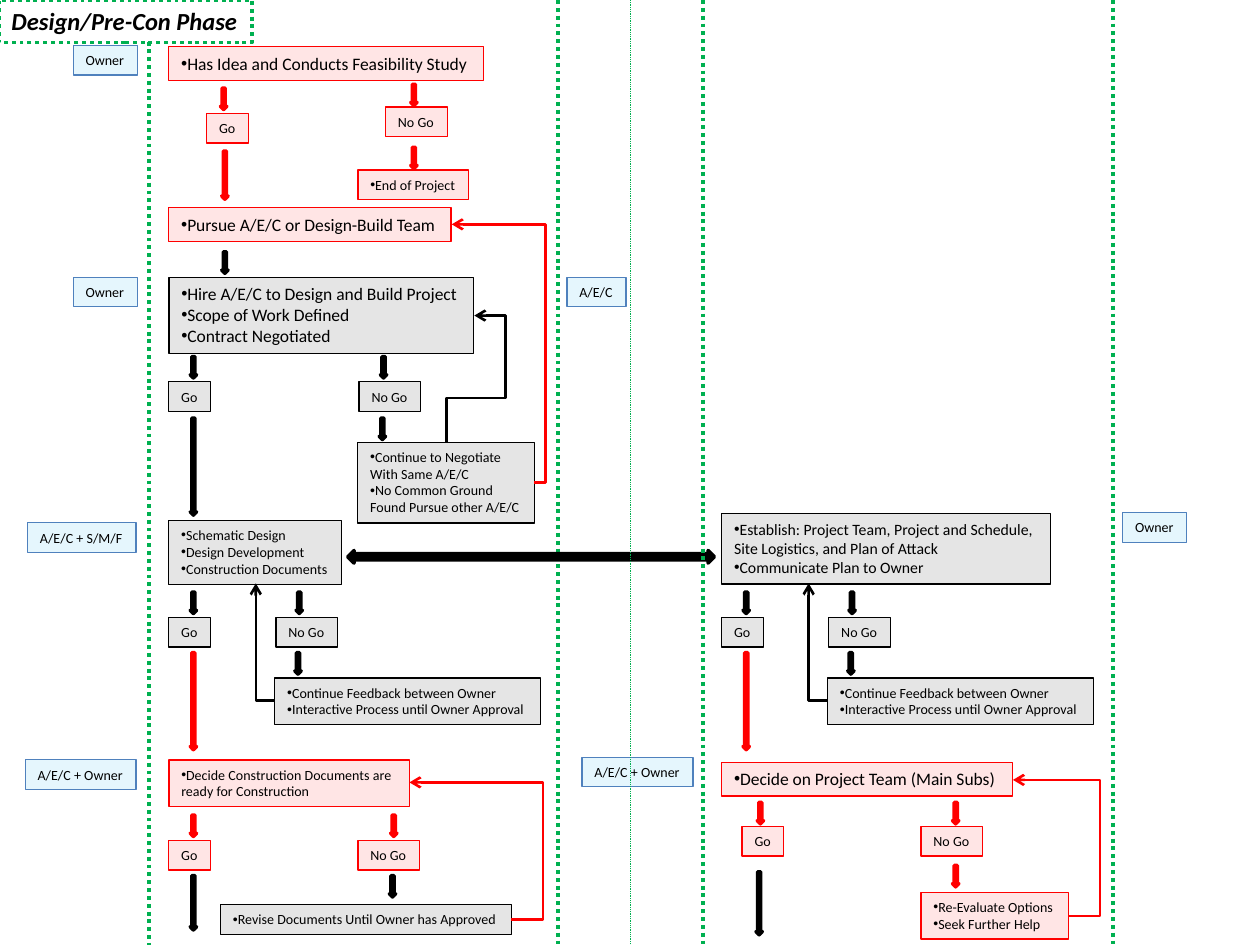
from lxml import etree
from pptx import Presentation
from pptx.dml.color import RGBColor
from pptx.enum.dml import MSO_LINE
from pptx.enum.shapes import MSO_CONNECTOR, MSO_SHAPE
from pptx.enum.text import MSO_ANCHOR, MSO_AUTO_SIZE, PP_ALIGN
from pptx.oxml.ns import qn
from pptx.util import Pt

STRAIGHT, ELBOW = MSO_CONNECTOR.STRAIGHT, MSO_CONNECTOR.ELBOW
RECTANGLE, DOWN, BOTH_WAYS = MSO_SHAPE.RECTANGLE, MSO_SHAPE.DOWN_ARROW, MSO_SHAPE.LEFT_RIGHT_ARROW
DOTTED = MSO_LINE.ROUND_DOT
LEFT = PP_ALIGN.LEFT
FIXED, GROWING = MSO_AUTO_SIZE.NONE, MSO_AUTO_SIZE.SHAPE_TO_FIT_TEXT

RED, BLACK, GREEN = "FF0000", "000000", "00B050"
CYAN, BLUE, BRICK = "00B0F0", "4F81BD", "C0504D"
TINT = 10
LINE_HEIGHT, PADDING = 1.22, 7.2
SHORT, LONG = 12.2, 55.4
FRAME_FORMAT = {"word_wrap": False, "vertical_anchor": MSO_ANCHOR.TOP}


def paint(fill, color, opacity=100):
    fill.solid()
    fill.fore_color.rgb = RGBColor.from_string(color)
    if opacity < 100:
        hue = fill._xPr.find(qn("a:solidFill"))[0]
        etree.SubElement(hue, qn("a:alpha"), val=str(opacity * 1000))


def connect(kind, x1, y1, x2, y2, color, width):
    connector = slide.shapes.add_connector(kind, Pt(x1), Pt(y1), Pt(x2), Pt(y2))
    paint(connector.line.fill, color)
    connector.line.width = Pt(width)
    etree.SubElement(connector._element.spPr, qn("a:effectLst"))
    return connector


prs = Presentation()
prs.slide_width, prs.slide_height = Pt(720), Pt(540)
slide = prs.slides.add_slide(prs.slide_layouts[5])

phase = slide.shapes.title
phase.left, phase.top, phase.width, phase.height = Pt(-0.7), Pt(0), Pt(144.7), Pt(24.3)
phase.text_frame.text = "Design/Pre-Con Phase"
phase.text_frame.auto_size = FIXED
paint(phase.line.fill, GREEN)
phase.line.width = Pt(2.25)
phase.line.dash_style = DOTTED
phase_text = phase.text_frame.paragraphs[0]
phase_text.alignment = LEFT
for key, value in {"name": "Calibri", "size": Pt(14), "bold": True, "italic": True}.items():
    setattr(phase_text.runs[0].font, key, value)
paint(phase_text.runs[0].font.fill, BLACK)
frames = [phase.text_frame]

steps = [
    (96.5, 26.6, 180, 10, RED, ["•Has Idea and Conducts Feasibility Study"]),
    (204.5, 97.2, 63.4, 8, RED, ["•End of Project"]),
    (96.5, 118.8, 161.3, 10, RED, ["•Pursue A/E/C or Design-Build Team"]),
    (96.5, 158.4, 174.2, 10, BLACK, ["•Hire A/E/C to Design and Build Project",
                                     "•Scope of Work Defined", "•Contract Negotiated"]),
    (96.5, 297.4, 98.6, 8, BLACK, ["•Schematic Design", "•Design Development",
                                   "•Construction Documents"]),
    (204.5, 252.7, 100.8, 8, BLACK, ["•Continue to Negotiate", "With Same A/E/C",
                                     "•No Common Ground", "Found Pursue other A/E/C"]),
    (96.5, 434.2, 137.5, 8, RED, ["•Decide Construction Documents are",
                                  "ready for Construction"]),
    (126, 517, 166.3, 8, BLACK, ["•Revise Documents Until Owner has Approved"]),
    (412.4, 293.6, 187.9, 9, BLACK, ["•Establish: Project Team, Project and Schedule,",
                                     "Site Logistics, and Plan of Attack",
                                     "•Communicate Plan to Owner"]),
    (412.4, 435.6, 166.3, 10, RED, ["•Decide on Project Team (Main Subs)"]),
    (526.3, 509.8, 84.2, 8, RED, ["•Re-Evaluate Options", "•Seek Further Help"]),
]
for left, top, width, party in [
    (41.8, 25.9, 36.7, "Owner"), (41.8, 158.4, 36.7, "Owner"), (641.5, 293, 36.7, "Owner"),
    (324, 158.4, 33.8, "A/E/C"), (15.8, 298.8, 61.9, "A/E/C + S/M/F"),
    (14.4, 434.2, 63.4, "A/E/C + Owner"), (332.6, 432.7, 63.4, "A/E/C + Owner"),
]:
    steps.append((left, top, width, 8, CYAN, [party]))

gates = [(118.1, 64.8, 220.3, 61.2, RED), (96.5, 218.2, 205.2, 218.2, BLACK),
         (96.5, 480.2, 204.5, 480.2, RED), (424.1, 472.3, 526.3, 472.3, RED)]
red_arrows = [(126, 50.4, SHORT), (234.7, 48.2, SHORT), (234.7, 84.2, SHORT),
              (126.7, 86.4, 27.4), (108.7, 465.8, SHORT), (223.2, 465.8, SHORT),
              (432.7, 458.6, SHORT), (544.3, 458.6, SHORT), (544.3, 494.6, SHORT)]
black_arrows = [(126.7, 144, SHORT), (108.7, 203.8, SHORT), (217.4, 203.8, SHORT),
                (432, 498.2, 36)]
cyan_arrows = [(108.7, 239, LONG), (216.7, 239, SHORT), (108.7, 500.4, 31),
               (222.5, 500.4, SHORT)]
brick_arrows = []
returns = [
    ("bentConnector4", 299.5, 224.6, 226.8, 208.8, BLACK, 90, [35100, 213200]),
    ("bentConnector3", 305.3, 275.8, 258.2, 128.2, RED, 0, [-13700]),
    ("bentConnector3", 292.3, 525.6, 234, 447.1, RED, 0, [-30800]),
    ("bentConnector3", 610.6, 523.4, 578.9, 445.7, RED, 0, [-56900]),
]

for column in (96.5, 412.4):
    gates.append((column, 352.8, column + 61.2, 352.8, BLACK))
    steps.append((column + 60.5, 387.4, 151.9, 8, BLACK,
                  ["•Continue Feedback between Owner",
                   "•Interactive Process until Owner Approval"]))
    black_arrows += [(column + 12.2, 338.4, SHORT), (column + 72.7, 338.4, SHORT)]
    cyan_arrows.append((column + 72, 373, SHORT))
    brick_arrows.append((column + 12.2, 373, LONG))
    returns.append(("bentConnector2", column + 60.5, 400.3, column + 49.7, 333.4, BLACK, 0, []))

for go_left, go_top, no_go_left, no_go_top, color in gates:
    steps.append((go_left, go_top, 23.8, 8, color, ["Go"]))
    steps.append((no_go_left, no_go_top, 35.3, 8, color, ["No Go"]))

for left, top, width, size, color, lines in steps:
    height = PADDING + len(lines) * size * LINE_HEIGHT
    step = slide.shapes.add_shape(RECTANGLE, Pt(left), Pt(top), Pt(width), Pt(height))
    step.shadow.inherit = False
    paint(step.fill, color, TINT)
    paint(step.line.fill, BLUE if color == CYAN else color)
    step.line.width = Pt(0.75)
    step.text_frame.auto_size = GROWING
    frames.append(step.text_frame)
    for index, line in enumerate(lines):
        paragraph = step.text_frame.add_paragraph() if index else step.text_frame.paragraphs[0]
        paragraph.alignment = LEFT
        run = paragraph.add_run()
        run.text = line.lstrip("•")
        run.font.name, run.font.size = "Calibri", Pt(size)
        paint(run.font.fill, BLACK)
        if line.startswith("•"):
            properties = paragraph._p.get_or_add_pPr()
            properties.set("marL", "0")
            properties.set("indent", "0")
            etree.SubElement(properties, qn("a:buFont"), typeface="Arial")
            etree.SubElement(properties, qn("a:buChar"), char="•")

for frame in frames:
    for key, value in FRAME_FORMAT.items():
        setattr(frame, key, value)

for x, top in ((318.9, 0), (85, 23.8)):
    connect(STRAIGHT, x, top, x, 540, GREEN, 2.25).line.dash_style = DOTTED

arrows = [(BOTH_WAYS, 198.7, 314.6, 209.5, 7.2, BLACK, BLACK, 100)]
for group, fill, outline, opacity in (
    (red_arrows, RED, RED, 100), (black_arrows, BLACK, BLACK, 100),
    (cyan_arrows, CYAN, BLACK, TINT), (brick_arrows, BRICK, RED, TINT),
):
    arrows += [(DOWN, x, y, 3.6, length, fill, outline, opacity) for x, y, length in group]
for kind, left, top, width, height, fill, outline, opacity in arrows:
    arrow = slide.shapes.add_shape(kind, Pt(left), Pt(top), Pt(width), Pt(height))
    arrow.shadow.inherit = False
    paint(arrow.fill, fill, opacity)
    paint(arrow.line.fill, outline)
    arrow.line.width = Pt(2)

for bend, x1, y1, x2, y2, color, rotation, adjustments in returns:
    loop = connect(ELBOW, x1, y1, x2, y2, color, 1.5)
    properties = loop._element.spPr
    if rotation:
        properties.find(qn("a:xfrm")).set("rot", str(rotation * 60000))
    geometry = properties.find(qn("a:prstGeom"))
    geometry.set("prst", bend)
    guides = geometry.find(qn("a:avLst"))
    for number, value in enumerate(adjustments, 1):
        etree.SubElement(guides, qn("a:gd"), name=f"adj{number}", fmla=f"val {value}")
    etree.SubElement(properties.find(qn("a:ln")), qn("a:tailEnd"), type="arrow")

for x, width in ((401.8, 2.25), (635.8, 2.25), (360, 0.5)):
    connect(STRAIGHT, x, 0, x, 540, GREEN, width).line.dash_style = DOTTED

prs.save("out.pptx")
